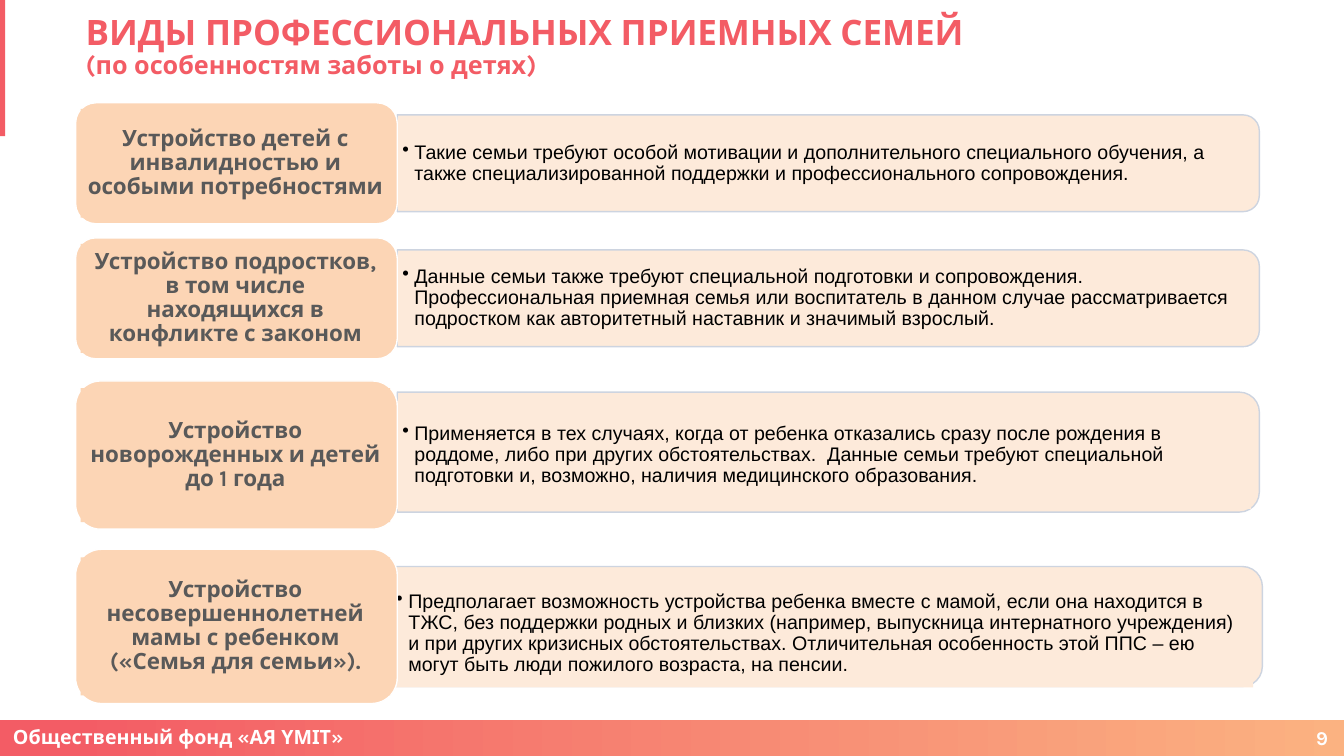
import pptx
import pptx.dml.color
import pptx.enum.shapes
import pptx.enum.text
import pptx.oxml.ns
import pptx.util
from lxml import etree

EMU_PER_PX = 9144
SHAPES = pptx.enum.shapes.MSO_SHAPE
ALIGN = pptx.enum.text.PP_ALIGN
CORAL, WHITE, PEACH, CREAM = "F35C65", "FFFFFF", "FCD5B5", "FDEADA"

# Each entry: label box, panel box, panel text box, label, description
FAMILY_TYPES = [
    ((75, 102, 319, 120), (394, 114, 855, 96), (394, 119, 848, 86),
     "Устройство детей с инвалидностью и особыми потребностями",
     "Такие семьи требуют особой мотивации и дополнительного специального обучения, "
     "а также специализированной поддержки и профессионального сопровождения."),
    ((75, 236, 319, 120), (394, 248, 855, 96), (394, 253, 848, 86),
     "Устройство подростков, в том числе находящихся в конфликте с законом",
     "Данные семьи также требуют специальной подготовки и сопровождения. "
     "Профессиональная приемная семья или воспитатель в данном случае "
     "рассматривается подростком как авторитетный наставник и значимый взрослый."),
    ((75, 378, 319, 147), (394, 389, 855, 119), (394, 398, 847, 107),
     "Устройство новорожденных и детей до 1 года",
     "Применяется в тех случаях, когда от ребенка отказались сразу после рождения "
     "в роддоме, либо при других обстоятельствах.  Данные семьи требуют специальной "
     "подготовки и, возможно, наличия медицинского образования."),
    ((75, 545, 319, 153), (388, 562, 864, 119), (388, 575, 855, 107),
     "Устройство несовершеннолетней мамы с ребенком («Семья для семьи»).",
     "Предполагает возможность устройства ребенка вместе с мамой, если она находится "
     "в ТЖС, без поддержки родных и близких (например, выпускница интернатного "
     "учреждения) и при других кризисных обстоятельствах. Отличительная особенность "
     "этой ППС – ею могут быть люди пожилого возраста, на пенсии."),
]


def px(length):
    """Turn px into EMU."""
    return pptx.util.Emu(round(length * EMU_PER_PX))


def colour(value):
    """Turn a hex string into a colour."""
    return pptx.dml.color.RGBColor.from_string(value)


def add_bullet(paragraph, indent):
    """Give a paragraph a round bullet with a hanging indent."""
    properties = paragraph._p.get_or_add_pPr()
    properties.set("marL", str(px(indent)))
    properties.set("indent", str(-px(indent)))
    etree.SubElement(properties, pptx.oxml.ns.qn("a:buChar"), char="•")


def write_text(shape, text, sizes=(14,), font="Karla", ink=WHITE, bold=True,
               align=ALIGN.LEFT, spacing=0.9, insets=(10, 5), bullet=0):
    """Write one paragraph, with a size for each of its broken lines."""
    frame = shape.text_frame
    frame.word_wrap = True
    frame.auto_size = pptx.enum.text.MSO_AUTO_SIZE.NONE
    frame.vertical_anchor = pptx.enum.text.MSO_ANCHOR.MIDDLE
    frame.margin_left = frame.margin_right = px(insets[0])
    frame.margin_top = frame.margin_bottom = px(insets[1])
    paragraph = frame.paragraphs[0]
    if bullet:
        add_bullet(paragraph, bullet)
    paragraph.alignment = align
    paragraph.line_spacing = spacing
    for index, (line, size) in enumerate(zip(text.split("\n"), sizes)):
        if index:
            paragraph.add_line_break()
        run = paragraph.add_run()
        run.text = line
        run.font.name = font
        run.font.size = pptx.util.Pt(size)
        run.font.bold = bold
        run.font.color.rgb = colour(ink)


def add_block(slide, kind, box, fill, line=None):
    """Add a filled preset shape, outlined if a line colour is given."""
    shape = slide.shapes.add_shape(kind, *map(px, box))
    shape.shadow.inherit = False
    shape.fill.solid()
    shape.fill.fore_color.rgb = colour(fill)
    if line:
        shape.line.color.rgb = colour(line)
        shape.line.width = pptx.util.Pt(1)
    else:
        shape.line.fill.background()
    return shape


def add_footer(slide, box):
    """Draw the gradient band with the fund name and slide number."""
    left, top, width, height = box
    band = add_block(slide, SHAPES.RECTANGLE, box, CORAL)
    band.fill.gradient()
    band.fill.gradient_angle = 0
    for stop, position, value in zip(band.fill.gradient_stops, (0.05, 1), (CORAL, "FBB281")):
        stop.position = position
        stop.color.rgb = colour(value)
    fund = slide.shapes.add_textbox(px(left + 3), px(top + 8), px(918), px(21))
    write_text(fund, "Общественный фонд «АЯ ҮМІТ»")
    number = slide.shapes.add_textbox(px(left + width - 61), px(top + 5), px(55), px(26))
    write_text(number, "9", align=ALIGN.RIGHT, spacing=1.0)


def add_heading(slide, box):
    """Fill the title placeholder."""
    title = slide.shapes.title
    title.left, title.top, title.width, title.height = map(px, box)
    write_text(title, "ВИДЫ ПРОФЕССИОНАЛЬНЫХ ПРИЕМНЫХ СЕМЕЙ\n(по особенностям заботы о детях)",
               sizes=(25, 18), ink=CORAL)


def add_panel(slide, box, text_box, text):
    """Draw a panel rounded on its right side, with a bulleted description."""
    left, top, width, height = box
    turned_box = (left + (width - height) / 2, top + (height - width) / 2, height, width)
    panel = add_block(slide, SHAPES.ROUND_2_SAME_RECTANGLE, turned_box, CREAM, "CDD4E0")
    panel.rotation = 90
    description = add_block(slide, SHAPES.RECTANGLE, text_box, CREAM)
    write_text(description, text, font="Arial", ink="000000", bold=False,
               insets=(5, 3), bullet=12)


def add_label(slide, box, text):
    """Draw a rounded label with its centred name."""
    left, top, width, height = box
    add_block(slide, SHAPES.ROUNDED_RECTANGLE, box, PEACH, WHITE)
    inset = round(height / 20)
    name_box = (left + 5, top + inset, width - 12, height - 2 * inset)
    name = add_block(slide, SHAPES.RECTANGLE, name_box, PEACH)
    write_text(name, text, sizes=(16,), ink="595959", align=ALIGN.CENTER, insets=(7, 3))


def main():
    """Build and save the slide."""
    presentation = pptx.Presentation()
    presentation.slide_width, presentation.slide_height = px(1333), px(750)
    slide = presentation.slides.add_slide(presentation.slide_layouts[5])
    add_footer(slide, (0, 714, 1333, 36))
    add_block(slide, SHAPES.RECTANGLE, (0, 0, 5, 135), CORAL)
    add_heading(slide, (75, 9, 998, 76))
    for label_box, panel_box, text_box, label, description in FAMILY_TYPES:
        add_panel(slide, panel_box, text_box, description)
        add_label(slide, label_box, label)
    presentation.save("out.pptx")


if __name__ == "__main__":
    main()
